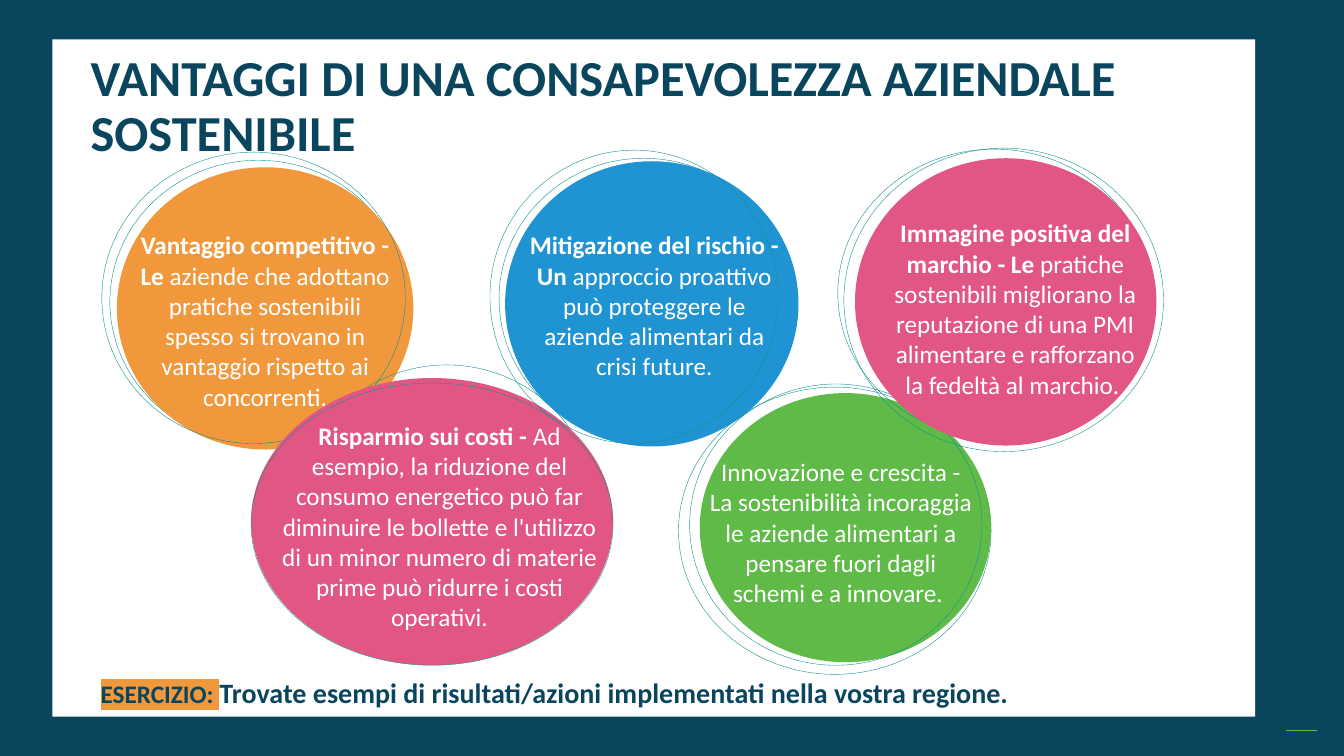
from lxml import etree
from pptx import Presentation
from pptx.dml.color import RGBColor
from pptx.enum.shapes import MSO_CONNECTOR, MSO_SHAPE
from pptx.enum.text import PP_ALIGN
from pptx.oxml.ns import qn
from pptx.util import Inches, Pt

RECTANGLE, OVAL = MSO_SHAPE.RECTANGLE, MSO_SHAPE.OVAL
STRAIGHT = MSO_CONNECTOR.STRAIGHT
LEFT, CENTER = PP_ALIGN.LEFT, PP_ALIGN.CENTER

NAVY, WHITE, TEAL = "09465E", "FFFFFF", "0D9390"
ORANGE, PINK, BLUE, GREEN = "F1983D", "E25684", "2094D2", "60BA47"

LEFT_BUBBLES = [
    (ORANGE, (1.16, 1.66, 2.94, 2.8),
     (1.09, 1.59, 2.94, 2.81), (1.01, 1.51, 3.01, 2.89)),
    (PINK, (2.49, 3.75, 3.59, 2.85),
     (2.96, 3.62, 2.94, 2.85), (2.49, 3.8, 3.59, 2.8)),
    (BLUE, (5.01, 1.6, 2.91, 2.83),
     (4.95, 1.57, 2.87, 2.79), (4.86, 1.49, 2.86, 2.91)),
]
LEFT_BENEFITS = [
    ((1.21, 2.23, 2.84, 1.62), "Vantaggio competitivo - Le ",
     "aziende che adottano pratiche sostenibili spesso si trovano in "
     "vantaggio rispetto ai concorrenti."),
    ((2.66, 4.12, 3.4, 2.22), "Risparmio sui costi - ",
     "Ad esempio, la riduzione del consumo energetico può far diminuire le "
     "bollette e l'utilizzo di un minor numero di materie prime può ridurre "
     "i costi operativi."),
    ((5.12, 2.23, 2.74, 1.65), "Mitigazione del rischio - Un ",
     "approccio proattivo può proteggere le aziende alimentari da crisi future."),
]
INNOVATION_BUBBLE = (
    GREEN, (6.94, 3.9, 2.89, 2.67),
    (6.73, 3.84, 3.1, 2.85), (6.84, 3.81, 2.9, 2.79))
INNOVATION = (
    (6.93, 4.48, 2.82, 1.95), "",
    "Innovazione e crescita - La sostenibilità incoraggia le aziende "
    "alimentari a pensare fuori dagli schemi e a innovare. ")
IMAGE_BUBBLE = (
    PINK, (8.48, 1.57, 2.99, 2.85),
    (8.31, 1.48, 3.1, 2.86), (8.37, 1.47, 3.17, 3.01))
IMAGE = (
    (8.7, 2.11, 2.74, 1.62), "Immagine positiva del marchio - Le ",
    "pratiche sostenibili migliorano la reputazione di una PMI alimentare e "
    "rafforzano la fedeltà al marchio. ")


def color(hex_code):
    """Turn a hex string into a colour."""
    return RGBColor.from_string(hex_code)


def add_figure(slide, kind, box, fill=None, line=None):
    """Draw a preset shape with an optional fill and a thin outline."""
    figure = slide.shapes.add_shape(kind, *map(Inches, box))
    figure.shadow.inherit = False
    if fill:
        figure.fill.solid()
        figure.fill.fore_color.rgb = color(fill)
    else:
        figure.fill.background()
    if line:
        figure.line.color.rgb = color(line)
        figure.line.width = Pt(0.28)
    else:
        figure.line.fill.background()


def add_bubble(slide, fill, disc, back_ring, front_ring):
    """Draw a coloured disc between two thin rings."""
    add_figure(slide, OVAL, back_ring, line=TEAL)
    add_figure(slide, OVAL, disc, fill=fill)
    add_figure(slide, OVAL, front_ring, line=TEAL)


def add_text(paragraph, text, size=18, ink=WHITE, bold=False, highlight=None):
    """Add a formatted run to a paragraph."""
    run = paragraph.add_run()
    run.text = text
    run.font.name = "Calibri"
    run.font.size = Pt(size)
    run.font.bold = bold
    run.font.color.rgb = color(ink)
    if highlight:
        marker = etree.Element(qn("a:highlight"))
        etree.SubElement(marker, qn("a:srgbClr"), val=highlight)
        run.font._element.find(qn("a:solidFill")).addnext(marker)


def add_paragraph_box(slide, box, align=LEFT):
    """Add a wrapping text box and return its paragraph."""
    frame = slide.shapes.add_textbox(*map(Inches, box)).text_frame
    frame.word_wrap = True
    paragraph = frame.paragraphs[0]
    paragraph.alignment = align
    return paragraph


def add_benefit(slide, box, heading, detail):
    """Write a benefit with its bold heading."""
    benefit = add_paragraph_box(slide, box, CENTER)
    if heading:
        add_text(benefit, heading, bold=True)
    add_text(benefit, detail)


def add_dash(slide):
    """Draw the small green dash in the lower right corner."""
    dash = slide.shapes.add_connector(
        STRAIGHT, Inches(12.75), Inches(7.25), Inches(13.06), Inches(7.25))
    dash.line.color.rgb = color(GREEN)
    dash.line.width = Pt(1)
    etree.SubElement(dash._element.spPr, qn("a:effectLst"))


def main():
    """Build and save the slide."""
    deck = Presentation()
    deck.slide_width, deck.slide_height = Inches(13.33), Inches(7.5)
    slide = deck.slides.add_slide(deck.slide_layouts[6])

    add_figure(slide, RECTANGLE, (0, 0, 13.33, 7.5), fill=NAVY)
    add_figure(slide, RECTANGLE, (0.52, 0.39, 11.93, 6.72), fill=WHITE)
    add_dash(slide)

    title = add_paragraph_box(slide, (0.8, 0.48, 10.99, 0.88))
    title.line_spacing = 0.9
    add_text(title, "VANTAGGI DI UNA CONSAPEVOLEZZA AZIENDALE SOSTENIBILE",
             size=36, ink=NAVY, bold=True)

    for bubble in LEFT_BUBBLES:
        add_bubble(slide, *bubble)
    for benefit in LEFT_BENEFITS:
        add_benefit(slide, *benefit)
    for bubble, benefit in ((INNOVATION_BUBBLE, INNOVATION), (IMAGE_BUBBLE, IMAGE)):
        add_bubble(slide, *bubble)
        add_benefit(slide, *benefit)

    exercise = add_paragraph_box(slide, (0.9, 6.65, 10.82, 0.44))
    add_text(exercise, "ESERCIZIO: ", ink=NAVY, bold=True, highlight=ORANGE)
    add_text(exercise,
             "Trovate esempi di risultati/azioni implementati nella vostra regione.",
             size=20, ink=NAVY, bold=True)

    deck.save("out.pptx")


if __name__ == "__main__":
    main()
